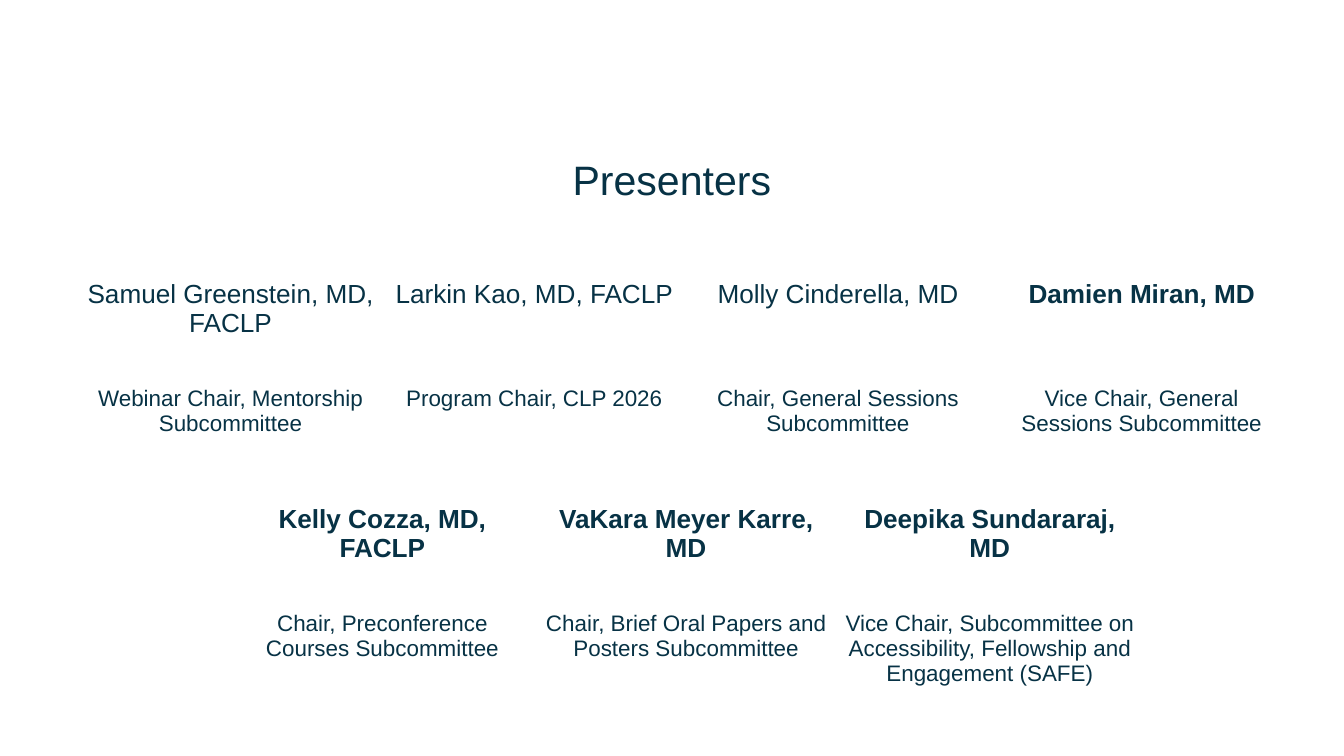
from lxml.etree import SubElement
from pptx import Presentation
from pptx.dml.color import RGBColor
from pptx.enum.text import MSO_ANCHOR, PP_ALIGN
from pptx.oxml.ns import qn
from pptx.util import Cm, Pt

NAVY = "073245"
WHITE = "FFFFFF"
SLIDE_WIDTH = 50.8
COLUMN_WIDTH = 11.48
NAME_HEIGHT, ROLE_HEIGHT = 4.01, 3.66


def format_text(paragraph, size, bold=False):
    paragraph.alignment = PP_ALIGN.CENTER
    for run in paragraph.runs:
        run.font.name = "Arial"
        run.font.size = Pt(size)
        run.font.bold = bold
        run.font.color.rgb = RGBColor.from_string(NAVY)


def set_borders(cell, bottom_width):
    """Draw white borders, 1 pt except at the bottom."""
    properties = cell._tc.get_or_add_tcPr()
    widths = {"lnL": 1, "lnR": 1, "lnT": 1, "lnB": bottom_width}
    for tag, width in widths.items():
        line = SubElement(properties, qn(f"a:{tag}"), w=str(Pt(width)))
        fill = SubElement(line, qn("a:solidFill"))
        SubElement(fill, qn("a:srgbClr"), val=WHITE)


presentation = Presentation()
presentation.slide_width = Cm(SLIDE_WIDTH)
presentation.slide_height = Cm(28.575)
slide = presentation.slides.add_slide(presentation.slide_layouts[6])
slide.background.fill.solid()
slide.background.fill.fore_color.rgb = RGBColor.from_string(WHITE)

# Each presenter: name, role, whether the name is bold
presenter_tables = [
    (2.97, 10.46, [
        ("Samuel Greenstein, MD, FACLP", "Webinar Chair, Mentorship Subcommittee", False),
        ("Larkin Kao, MD, FACLP", "Program Chair, CLP 2026", False),
        ("Molly Cinderella, MD", "Chair, General Sessions Subcommittee", False),
        ("Damien Miran, MD", "Vice Chair, General Sessions Subcommittee", True),
    ]),
    (8.71, 18.95, [
        ("Kelly Cozza, MD, FACLP", "Chair, Preconference Courses Subcommittee", True),
        ("VaKara Meyer Karre, MD", "Chair, Brief Oral Papers and Posters Subcommittee", True),
        ("Deepika Sundararaj, MD",
         "Vice Chair, Subcommittee on Accessibility, Fellowship and Engagement (SAFE)", True),
    ]),
]

for left, top, presenters in presenter_tables:
    table = slide.shapes.add_table(
        2, len(presenters), Cm(left), Cm(top),
        Cm(COLUMN_WIDTH * len(presenters)), Cm(NAME_HEIGHT + ROLE_HEIGHT)).table
    table.horz_banding = False
    table.rows[0].height = Cm(NAME_HEIGHT)
    table.rows[1].height = Cm(ROLE_HEIGHT)
    for column, (name, role, bold_name) in enumerate(presenters):
        table.columns[column].width = Cm(COLUMN_WIDTH)
        rows = [(name, 28, bold_name, 3), (role, 24, False, 1)]
        for row, (text, size, bold, bottom_width) in enumerate(rows):
            cell = table.cell(row, column)
            cell.text_frame.text = text
            format_text(cell.text_frame.paragraphs[0], size, bold)
            set_borders(cell, bottom_width)
            cell.fill.background()

title = slide.shapes.add_textbox(Cm(2), Cm(4.98), Cm(SLIDE_WIDTH - 4), Cm(3.78))
title.text_frame.word_wrap = True
title.text_frame.vertical_anchor = MSO_ANCHOR.MIDDLE
title.text_frame.text = "Presenters"
paragraph = title.text_frame.paragraphs[0]
paragraph.line_spacing = 0.9
paragraph.space_after = Pt(6)
format_text(paragraph, 44)

presentation.save("out.pptx")
